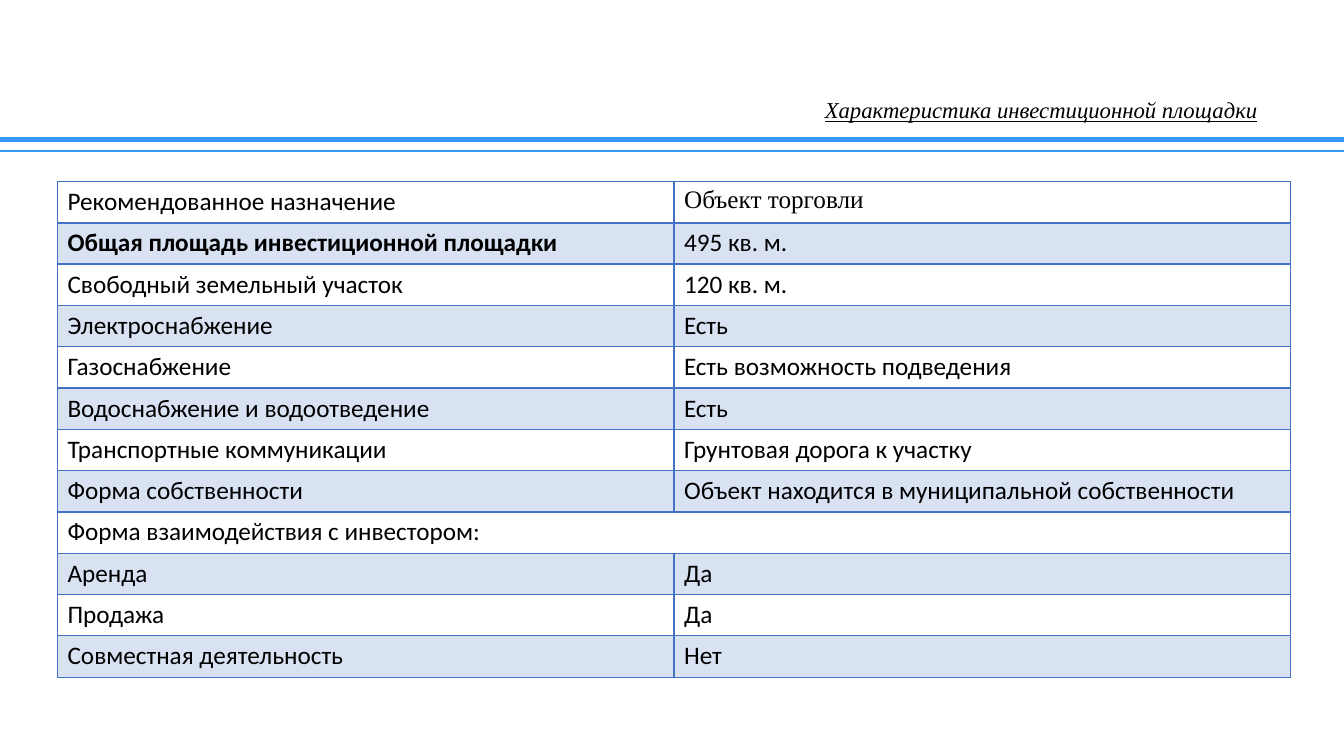
from dataclasses import dataclass

import pptx
import pptx.dml.color
import pptx.enum.dml
import pptx.enum.shapes
import pptx.enum.text
import pptx.oxml
import pptx.oxml.ns
import pptx.util
from lxml import etree
from pptx.util import Inches


@dataclass(frozen=True)
class Theme:
    text: str = "000000"
    rule: str = "3399FF"
    accent: str = "4472C4"
    band_opacity: int = 20
    title_font: str = "Times New Roman"
    body_font: str = "Calibri"
    title_size: float = 16.2
    body_size: float = 18


THEME = Theme()
TITLE = "Характеристика инвестиционной площадки"
SITE_ROWS = [
    ("Рекомендованное назначение", "Объект торговли"),
    ("Общая площадь инвестиционной площадки", "495 кв. м."),
    ("Свободный земельный участок", "120 кв. м."),
    ("Электроснабжение", "Есть"),
    ("Газоснабжение", "Есть возможность подведения"),
    ("Водоснабжение и водоотведение", "Есть"),
    ("Транспортные коммуникации", "Грунтовая дорога к участку"),
    ("Форма собственности", "Объект находится в муниципальной собственности"),
    ("Форма взаимодействия с инвестором:",),
    ("Аренда", "Да"),
    ("Продажа", "Да"),
    ("Совместная деятельность", "Нет"),
]


def color(value):
    return pptx.dml.color.RGBColor.from_string(value)


def add_run(paragraph, text, font_name, size):
    run = paragraph.add_run()
    run.text = text
    run.font.name = font_name
    run.font.size = pptx.util.Pt(size)
    run.font.color.rgb = color(THEME.text)
    return run


def add_title(slide, left, top, width, height):
    title = slide.shapes.title
    title.left, title.top, title.width, title.height = left, top, width, height
    frame = title.text_frame
    frame.word_wrap = True
    frame.auto_size = pptx.enum.text.MSO_AUTO_SIZE.NONE
    frame.vertical_anchor = pptx.enum.text.MSO_ANCHOR.MIDDLE
    paragraph = frame.paragraphs[0]
    paragraph.alignment = pptx.enum.text.PP_ALIGN.CENTER
    paragraph.line_spacing = 0.9
    run = add_run(paragraph, TITLE, THEME.title_font, THEME.title_size)
    run.font.italic = True
    run.font.underline = True


def add_double_rule(slide, left, top, width, gap):
    """Draw a thick line with a thinner one below it."""
    for offset, weight in ((0, 3.5), (gap, 1.5)):
        rule = slide.shapes.add_connector(
            pptx.enum.shapes.MSO_CONNECTOR.STRAIGHT,
            left, top + offset, left + width, top + offset)
        rule.line.color.rgb = color(THEME.rule)
        rule.line.width = pptx.util.Pt(weight)
        etree.SubElement(rule._element.spPr, pptx.oxml.ns.qn("a:effectLst"))


def set_borders(cell, bottom_width):
    properties = cell._tc.get_or_add_tcPr()
    for side, width in (("L", 1), ("R", 1), ("T", 1), ("B", bottom_width)):
        properties.append(pptx.oxml.parse_xml(
            f'<a:ln{side} {pptx.oxml.ns.nsdecls("a")} w="{pptx.util.Pt(width)}">'
            f'<a:solidFill><a:srgbClr val="{THEME.accent}"/></a:solidFill>'
            f'</a:ln{side}>'))


def set_fill(cell, banded):
    if not banded:
        cell.fill.background()
        return
    cell.fill.solid()
    cell.fill.fore_color.rgb = color(THEME.accent)
    accent = cell._tc.tcPr.find(".//" + pptx.oxml.ns.qn("a:solidFill") + "[last()]")
    accent = cell._tc.tcPr.findall(pptx.oxml.ns.qn("a:solidFill"))[0][0]
    alpha = etree.SubElement(accent, pptx.oxml.ns.qn("a:alpha"))
    alpha.set("val", str(THEME.band_opacity * 1000))


def add_site_table(slide, left, top, width, height):
    table = slide.shapes.add_table(
        len(SITE_ROWS), 2, left, top, width, height).table
    table.first_row = False
    table.horz_banding = False
    for row_index, texts in enumerate(SITE_ROWS):
        if len(texts) == 1:
            table.cell(row_index, 0).merge(table.cell(row_index, 1))
        for column_index in range(2):
            cell = table.cell(row_index, column_index)
            set_borders(cell, 2 if row_index == 0 else 1)
            set_fill(cell, row_index % 2 == 1)
        for column_index, text in enumerate(texts):
            position = (row_index, column_index)
            font_name = THEME.title_font if position == (0, 1) else THEME.body_font
            paragraph = table.cell(*position).text_frame.paragraphs[0]
            run = add_run(paragraph, text, font_name, THEME.body_size)
            run.font.bold = position == (1, 0)


def main():
    presentation = pptx.Presentation()
    presentation.slide_width = Inches(13.33)
    presentation.slide_height = Inches(7.5)
    slide = presentation.slides.add_slide(presentation.slide_layouts[5])
    add_double_rule(slide, 0, Inches(1.38), presentation.slide_width, Inches(0.12))
    add_title(slide, Inches(7.86), Inches(0.97), Inches(4.93), Inches(0.27))
    add_site_table(slide, Inches(0.57), Inches(1.8), Inches(12.23), Inches(4.92))
    presentation.save("out.pptx")


if __name__ == "__main__":
    main()
